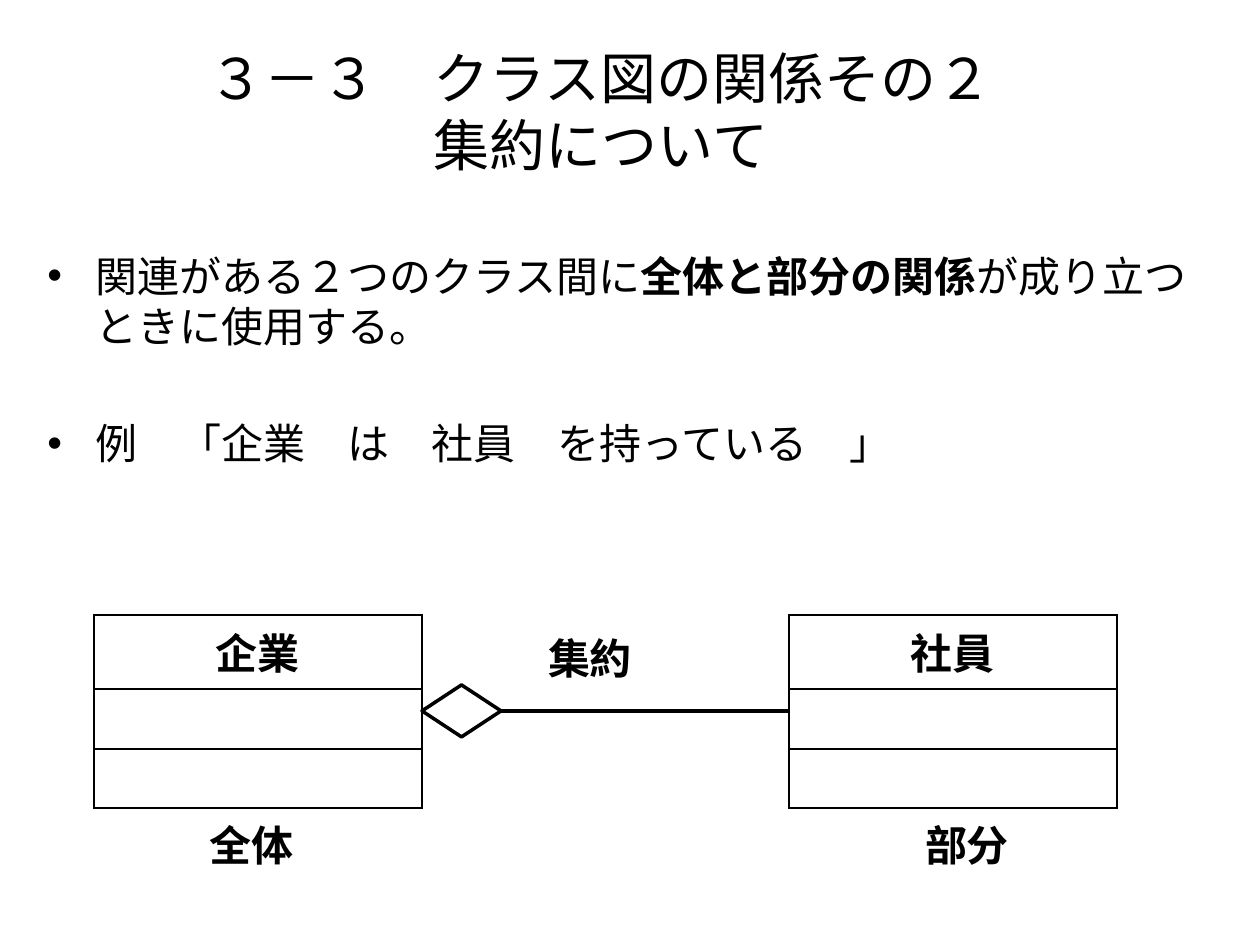
from lxml import etree
from pptx import Presentation
from pptx.dml.color import RGBColor
from pptx.enum.shapes import MSO_CONNECTOR as Connector, MSO_SHAPE as Shape
from pptx.enum.text import MSO_ANCHOR as Anchor, PP_ALIGN as Align
from pptx.oxml.ns import qn
from pptx.util import Emu, Pt

PX = 914400 // 126
BLACK = RGBColor(0x00, 0x00, 0x00)
WHITE = RGBColor(0xFF, 0xFF, 0xFF)
FONT = "Calibri"
BULLET_INDENT = 48
CLASS_TOP, CLASS_WIDTH = 615, 328
ROW_HEIGHTS = (74, 60, 59)


def px(*lengths):
    return [Emu(length * PX) for length in lengths]


def style(paragraph, size, bold=False):
    font = paragraph.font
    font.name, font.size, font.bold = FONT, Pt(size), bold
    font.color.rgb = BLACK


def use_east_asian_font(paragraph):
    latin = paragraph._p.pPr.find(qn("a:defRPr")).find(qn("a:latin"))
    east_asian = etree.Element(qn("a:ea"), typeface=FONT)
    latin.addnext(east_asian)


def add_text_frame(slide, box, anchor=Anchor.TOP):
    frame = slide.shapes.add_textbox(*px(*box)).text_frame
    frame.word_wrap = True
    frame.vertical_anchor = anchor
    return frame


def add_centred_text(slide, text, box, size, bold=False, anchor=Anchor.TOP):
    paragraph = add_text_frame(slide, box, anchor).paragraphs[0]
    paragraph.text = text
    paragraph.alignment = Align.CENTER
    style(paragraph, size, bold)
    use_east_asian_font(paragraph)


def add_bullets(slide, items, box, size, gap):
    frame = add_text_frame(slide, box)
    for index, runs in enumerate(items):
        paragraph = frame.add_paragraph() if index else frame.paragraphs[0]
        if index:
            paragraph.space_before = Pt(gap)
        properties = paragraph._p.get_or_add_pPr()
        properties.set("marL", str(BULLET_INDENT * PX))
        properties.set("indent", str(-BULLET_INDENT * PX))
        etree.SubElement(properties, qn("a:buFont"), typeface="Arial")
        etree.SubElement(properties, qn("a:buChar"), char="•")
        style(paragraph, size)
        use_east_asian_font(paragraph)
        for text, bold in runs:
            run = paragraph.add_run()
            run.text = text
            if bold:
                run.font.bold = True


def set_borders(cell):
    properties = cell._tc.get_or_add_tcPr()
    for index, side in enumerate(("lnL", "lnR", "lnT", "lnB")):
        line = etree.Element(qn(f"a:{side}"), w=str(Pt(1)))
        fill = etree.SubElement(line, qn("a:solidFill"))
        etree.SubElement(fill, qn("a:srgbClr"), val=str(BLACK))
        properties.insert(index, line)


def add_class(slide, name, left):
    box = px(left, CLASS_TOP, CLASS_WIDTH, sum(ROW_HEIGHTS))
    table = slide.shapes.add_table(len(ROW_HEIGHTS), 1, *box).table
    table.first_row = table.horz_banding = False
    for index, height in enumerate(ROW_HEIGHTS):
        table.rows[index].height = Emu(height * PX)
        cell = table.cell(index, 0)
        cell.fill.background()
        set_borders(cell)
    heading = table.cell(0, 0).text_frame.paragraphs[0]
    heading.text = name
    heading.alignment = Align.CENTER
    style(heading, 24, bold=True)


def add_aggregation(slide, left, right, middle):
    width, height = 79, 52
    diamond = slide.shapes.add_shape(
        Shape.DIAMOND, *px(left, middle - height // 2, width, height))
    diamond.shadow.inherit = False
    diamond.fill.solid()
    diamond.fill.fore_color.rgb = WHITE
    link = slide.shapes.add_connector(
        Connector.STRAIGHT, *px(left + width, middle, right, middle))
    link.begin_connect(diamond, 3)
    etree.SubElement(link._element.spPr, qn("a:effectLst"))
    for part in (diamond, link):
        part.line.color.rgb = BLACK
        part.line.width = Pt(2)


def main():
    deck = Presentation()
    deck.slide_width, deck.slide_height = px(1260, 945)
    slide = deck.slides.add_slide(deck.slide_layouts[6])

    # Title and explanation
    add_centred_text(slide, "３－３　クラス図の関係その２\v集約について",
                     (64, 26, 1074, 169), 32, anchor=Anchor.MIDDLE)
    add_bullets(slide, [
        [("関連がある２つのクラス間に", False), ("全体と部分の関係", True),
         ("が成り立つときに使用する。", False)],
        [("例　「企業　は　社員　を持っている　」", False)],
    ], (35, 244, 1172, 311), 24, gap=38)

    # Class diagram
    whole_left, part_left = 94, 789
    add_class(slide, "企業", whole_left)
    add_class(slide, "社員", part_left)
    add_aggregation(slide, whole_left + CLASS_WIDTH, part_left, 711)

    # Labels
    for text, left, top in (("全体", 123, 813), ("部分", 838, 813),
                            ("集約", 461, 626)):
        add_centred_text(slide, text, (left, top, 258, 63), 24, bold=True)

    deck.save("out.pptx")


if __name__ == "__main__":
    main()
